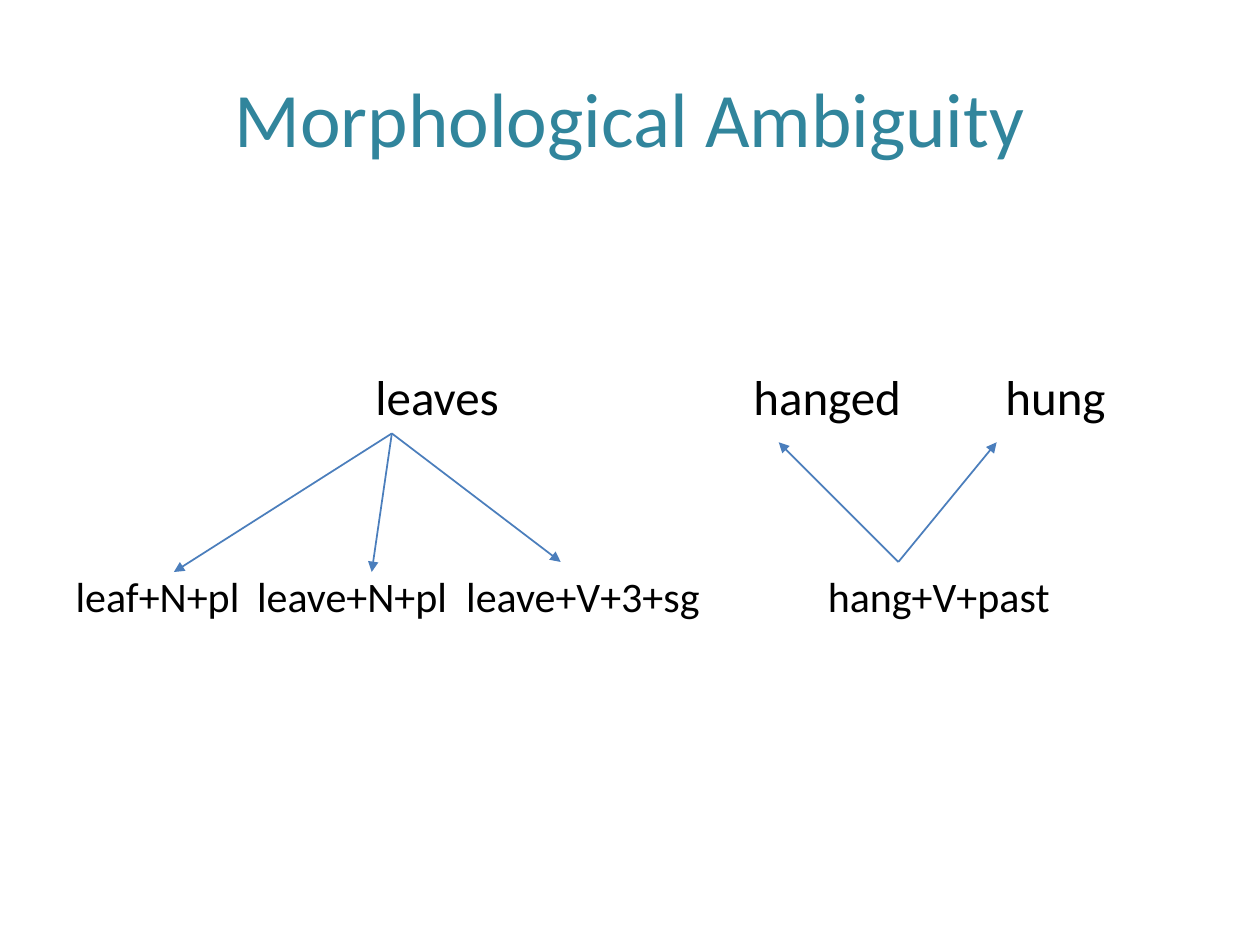
from dataclasses import dataclass

from lxml import etree
from pptx import Presentation
from pptx import util as u
from pptx.dml.color import RGBColor
from pptx.enum import shapes, text
from pptx.oxml import ns


@dataclass(frozen=True)
class Theme:
    font: str = "Calibri"
    heading: RGBColor = RGBColor(0x31, 0x85, 0x9C)
    ink: RGBColor = RGBColor(0, 0, 0)
    arrow: RGBColor = RGBColor(0x4B, 0x7E, 0xBC)
    heading_size: int = 44
    surface_size: int = 28
    analysis_size: int = 24
    arrow_width: int = 1


THEME = Theme()

SURFACE_TOP = 2.91
SURFACE_FORMS = [("leaves", 2.98, 1.2), ("hanged", 5.98, 1.4), ("hung", 7.98, 1.1)]

ANALYSIS_TOP = 4.53
ANALYSES = [
    ("leaf+N+pl", 0.6, 1.4),
    ("leave+N+pl", 2.04, 1.6),
    ("leave+V+3+sg", 3.7, 2.0),
    ("hang+V+past", 6.57, 1.9),
]

FANS = [
    ((3.11, 3.44), [(1.38, 4.54), (2.95, 4.54), (4.45, 4.46)]),
    ((7.13, 4.46), [(6.18, 3.51), (7.91, 3.51)]),
]


def add_label(slide, wording, left, top, width, height, size, color):
    label = slide.shapes.add_textbox(
        u.Inches(left), u.Inches(top), u.Inches(width), u.Inches(height)
    )
    frame = label.text_frame
    frame.word_wrap = True
    frame.margin_left = frame.margin_right = 0
    frame.margin_top = frame.margin_bottom = 0
    frame.text = wording
    font = frame.paragraphs[0].runs[0].font
    font.name = THEME.font
    font.size = u.Pt(size)
    font.color.rgb = color
    return frame


def add_heading(slide, wording):
    frame = add_label(
        slide, wording, 0.5, 0.3, 9, 1.25, THEME.heading_size, THEME.heading
    )
    frame.vertical_anchor = text.MSO_ANCHOR.MIDDLE
    frame.paragraphs[0].alignment = text.PP_ALIGN.CENTER


def add_word_row(slide, words, top, size):
    for wording, left, width in words:
        add_label(slide, wording, left, top, width, 0.48, size, THEME.ink)


def add_arrow(slide, start, end):
    arrow = slide.shapes.add_connector(
        shapes.MSO_CONNECTOR.STRAIGHT, *(u.Inches(value) for value in start + end)
    )
    arrow.line.color.rgb = THEME.arrow
    arrow.line.width = u.Pt(THEME.arrow_width)
    outline = arrow.line._get_or_add_ln()
    etree.SubElement(outline, ns.qn("a:tailEnd"), type="triangle")
    etree.SubElement(arrow._element.spPr, ns.qn("a:effectLst"))


def main():
    deck = Presentation()
    deck.slide_width = u.Inches(10)
    deck.slide_height = u.Inches(7.5)
    slide = deck.slides.add_slide(deck.slide_layouts[6])

    add_heading(slide, "Morphological Ambiguity")
    add_word_row(slide, SURFACE_FORMS, SURFACE_TOP, THEME.surface_size)
    add_word_row(slide, ANALYSES, ANALYSIS_TOP, THEME.analysis_size)
    for origin, targets in FANS:
        for target in targets:
            add_arrow(slide, origin, target)

    deck.save("out.pptx")


if __name__ == "__main__":
    main()
